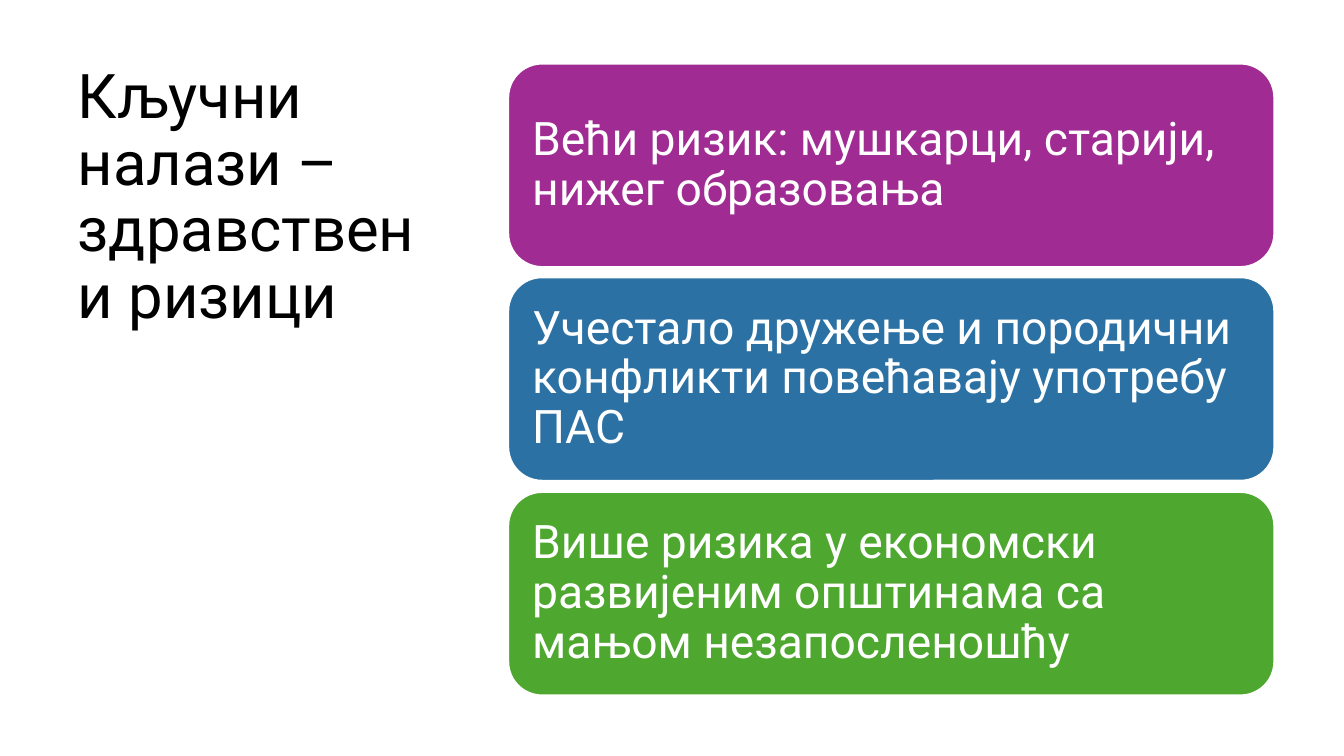
from pptx import Presentation
from pptx.dml.color import RGBColor
from pptx.enum.shapes import MSO_SHAPE as Shape
from pptx.enum.text import MSO_ANCHOR as Anchor, MSO_AUTO_SIZE as AutoSize, PP_ALIGN as Align
from pptx.util import Pt

EMU_PER_PX = 9144  # 100 px to the inch
COLOURS = {
    "text": "000000",
    "light": "FFFFFF",
    "purple": "A02B93",
    "blue": "2C71A4",
    "green": "4EA72E",
}


def px(length):
    return length * EMU_PER_PX


def colour(name):
    return RGBColor.from_string(COLOURS[name])


def assign(target, values):
    for name, value in values.items():
        setattr(target, name, value)


class SlideBuilder:
    font = "Roboto"
    line_spacing = 0.9

    def __init__(self, slide):
        self.slide = slide

    def set_text(self, shape, text, size, ink, frame_format):
        frame = shape.text_frame
        frame.text = text
        assign(frame, {"word_wrap": True, "auto_size": AutoSize.NONE, **frame_format})
        paragraph = frame.paragraphs[0]
        assign(paragraph, {"alignment": Align.LEFT, "line_spacing": self.line_spacing})
        run_font = paragraph.runs[0].font
        assign(run_font, {"name": self.font, "size": Pt(size)})
        run_font.color.rgb = colour(ink)

    def title(self, text, left, top, width, height):
        heading = self.slide.shapes.title
        assign(heading, {"left": px(left), "top": px(top),
                         "width": px(width), "height": px(height)})
        self.set_text(heading, text, 44, "text", {"vertical_anchor": Anchor.TOP})

    def card(self, text, fill, left, top, width, height):
        card = self.slide.shapes.add_shape(
            Shape.ROUNDED_RECTANGLE, px(left), px(top), px(width), px(height))
        card.shadow.inherit = False
        card.fill.solid()
        card.fill.fore_color.rgb = colour(fill)
        card.line.color.rgb = colour("light")
        card.line.width = Pt(1.5)
        margins = {f"margin_{side}": px(14) for side in ("left", "top", "right", "bottom")}
        self.set_text(card, text, 33, "light", {"vertical_anchor": Anchor.MIDDLE, **margins})


def main():
    deck = Presentation()
    assign(deck, {"slide_width": px(1333), "slide_height": px(750)})
    builder = SlideBuilder(deck.slides.add_slide(deck.slide_layouts[5]))

    # Heading on the left
    builder.title("Кључни налази – здравствени ризици", 67, 60, 382, 633)

    # Stacked findings on the right
    findings = [
        ("Већи ризик: мушкарци, старији, нижег образовања", "purple"),
        ("Учестало дружење и породични конфликти повећавају употребу ПАС", "blue"),
        ("Више ризика у економски развијеним општинама са мањом незапосленошћу", "green"),
    ]
    first_top, last_top = 63, 488
    for index, (finding, fill) in enumerate(findings):
        top = first_top + index * (last_top - first_top) // (len(findings) - 1)
        builder.card(finding, fill, 504, top, 760, 202)

    deck.save("out.pptx")


if __name__ == "__main__":
    main()
